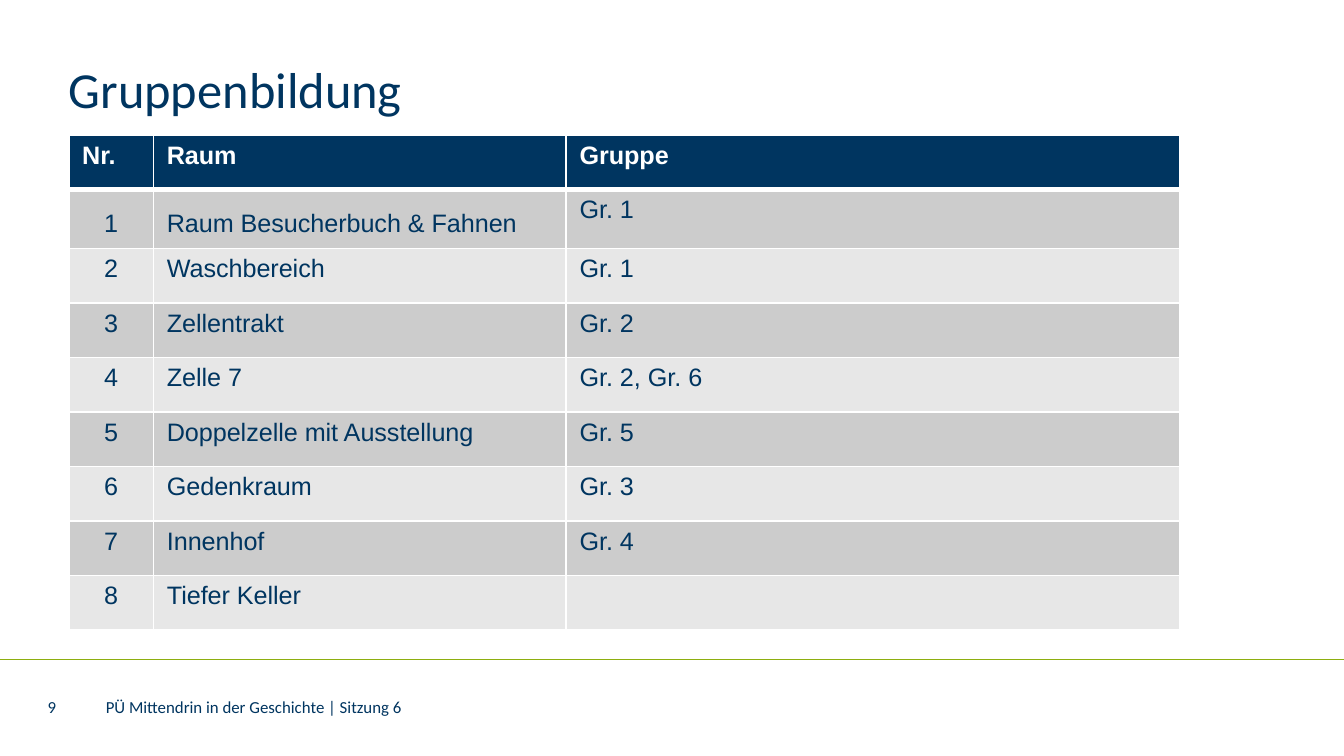
from lxml import etree
from pptx import Presentation
from pptx.dml.color import RGBColor
from pptx.enum.shapes import MSO_CONNECTOR
from pptx.enum.text import MSO_ANCHOR, PP_ALIGN
from pptx.oxml.ns import qn
from pptx.util import Cm, Pt

STRAIGHT = MSO_CONNECTOR.STRAIGHT
TOP, MIDDLE = MSO_ANCHOR.TOP, MSO_ANCHOR.MIDDLE
LEFT, CENTER = PP_ALIGN.LEFT, PP_ALIGN.CENTER

NAVY, WHITE, GREEN = "003560", "FFFFFF", "8DAE10"
DARK_BAND, LIGHT_BAND = "CCCCCC", "E7E7E7"


def color(value):
    return RGBColor.from_string(value)


def add_span(para, text, size, font, value, bold=False):
    span = para.add_run()
    span.text = text
    span.font.size = Pt(size)
    span.font.name = font
    span.font.bold = bold
    span.font.color.rgb = color(value)


deck = Presentation()
deck.slide_width, deck.slide_height = Cm(25.4), Cm(14.28)
page = deck.slides.add_slide(deck.slide_layouts[6])

# Footer rule
rule = page.shapes.add_connector(STRAIGHT, Cm(0), Cm(12.46), Cm(25.4), Cm(12.46))
rule.line.color.rgb = color(GREEN)
rule.line.width = Pt(0.5)
etree.SubElement(rule.element.spPr, qn("a:effectLst"))

# Title, page number and footer
texts = [
    ("Gruppenbildung", 1.3, 1.09, 21, 1.3, 27, TOP),
    ("9", 0.9, 13.2, 0.7, 0.3, 9, MIDDLE),
    ("PÜ Mittendrin in der Geschichte | Sitzung 6", 2, 13.2, 15.3, 0.3, 9, MIDDLE),
]
for text, left, top, width, height, size, anchor in texts:
    box = page.shapes.add_textbox(Cm(left), Cm(top), Cm(width), Cm(height))
    frame = box.text_frame
    frame.word_wrap = True
    frame.vertical_anchor = anchor
    frame.margin_left = frame.margin_right = Cm(0)
    frame.margin_top = frame.margin_bottom = Cm(0)
    add_span(frame.paragraphs[0], text, size, "Calibri", NAVY)

# Table of rooms and groups
rows = [
    ("Nr.", "Raum", "Gruppe"),
    ("1", "Raum Besucherbuch & Fahnen", "Gr. 1"),
    ("2", "Waschbereich", "Gr. 1"),
    ("3", "Zellentrakt", "Gr. 2"),
    ("4", "Zelle 7", "Gr. 2, Gr. 6"),
    ("5", "Doppelzelle mit Ausstellung", "Gr. 5"),
    ("6", "Gedenkraum", "Gr. 3"),
    ("7", "Innenhof", "Gr. 4"),
    ("8", "Tiefer Keller", ""),
]
widths = [1.6, 7.8, 11.6]
row_height = 1.03
table = page.shapes.add_table(
    len(rows), len(widths), Cm(1.3), Cm(2.55), Cm(sum(widths)), Cm(row_height * len(rows))
).table
for column, width in zip(table.columns, widths):
    column.width = Cm(width)

for r, row in enumerate(rows):
    table.rows[r].height = Cm(row_height)
    header = r == 0
    fill = NAVY if header else DARK_BAND if r % 2 else LIGHT_BAND
    for c, text in enumerate(row):
        cell = table.cell(r, c)

        # White borders, heavier below the header
        properties = cell._tc.get_or_add_tcPr()
        for side in ("lnL", "lnR", "lnT", "lnB"):
            heavy = (r, side) in ((0, "lnB"), (1, "lnT"))
            line = etree.SubElement(properties, qn("a:" + side), w=str(Pt(3 if heavy else 1)))
            paint = etree.SubElement(line, qn("a:solidFill"))
            etree.SubElement(paint, qn("a:srgbClr"), val=WHITE)
        cell.fill.solid()
        cell.fill.fore_color.rgb = color(fill)

        para = cell.text_frame.paragraphs[0]
        para.alignment = CENTER if c == 0 and not header else LEFT
        if r == 1 and c < 2:
            para.line_spacing = 1.5
        if text:
            add_span(para, text, 13.5, "Arial", WHITE if header else NAVY, header)
        else:
            para.font.size = Pt(13.5)

deck.save("out.pptx")
